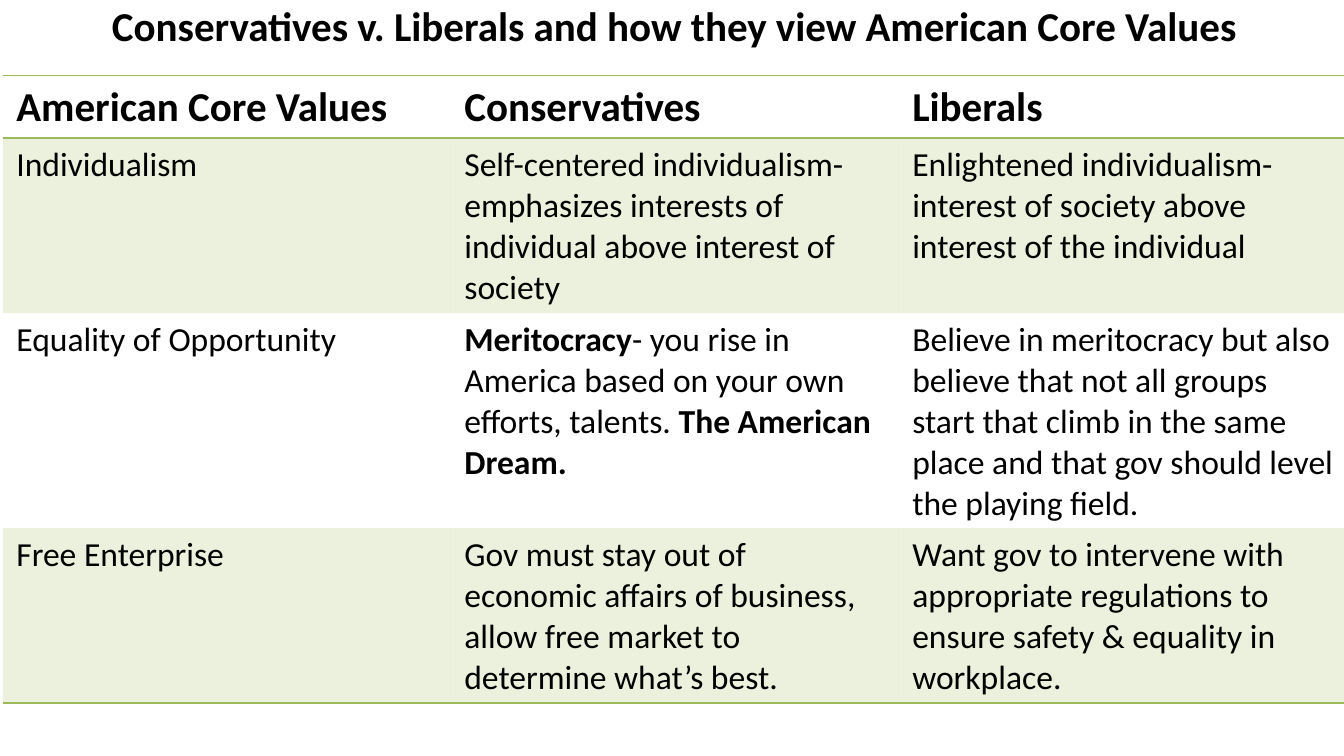
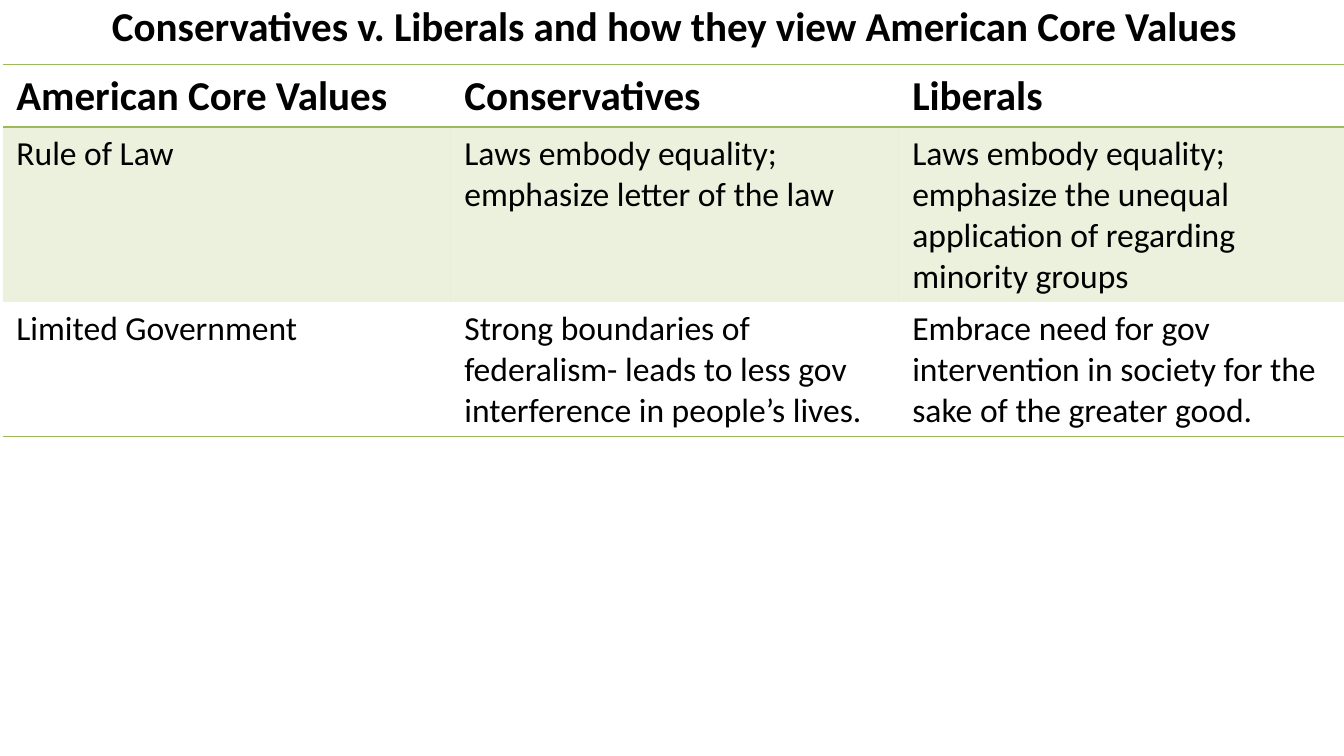
from dataclasses import dataclass
from typing import NamedTuple

from lxml.etree import SubElement
from pptx import Presentation
from pptx.dml.color import RGBColor
from pptx.enum.text import MSO_ANCHOR, MSO_AUTO_SIZE, PP_ALIGN
from pptx.oxml.ns import qn
from pptx.util import Pt


@dataclass(frozen=True)
class Theme:
    font: str = "Calibri"
    text: RGBColor = RGBColor(0x00, 0x00, 0x00)
    accent: RGBColor = RGBColor(0x9B, 0xBB, 0x59)
    heading_size: Pt = Pt(22)
    body_size: Pt = Pt(18)
    rule_width: Pt = Pt(1)
    band_opacity: int = 20
    plain_table_style: str = "{2D5ABB26-0587-4C30-8999-92F81FD0307C}"


class TextRun(NamedTuple):
    text: str
    bold: bool = False


class CoreValue(NamedTuple):
    name: str
    conservatives: list[TextRun]
    liberals: list[TextRun]


@dataclass(frozen=True)
class Comparison:
    top: Pt
    height: Pt
    values: list[CoreValue]


THEME = Theme()
TITLE = "Conservatives v. Liberals and how they view American Core Values"
HEADINGS = ["American Core Values", "Conservatives", "Liberals"]
TABLE_LEFT = Pt(1.6)
COLUMN_WIDTH = Pt(240)
ROW_HEIGHT = Pt(29.2)  # minimum: rows grow with their text

COMPARISONS = [
    Comparison(Pt(40.4), Pt(336.2), [
        CoreValue(
            "Individualism",
            [TextRun("Self-centered individualism- emphasizes interests of "
                     "individual above interest of society")],
            [TextRun("Enlightened individualism- interest of society above "
                     "interest of the individual")]),
        CoreValue(
            "Equality of Opportunity",
            [TextRun("Meritocracy", True),
             TextRun("- you rise in America based on your own efforts, talents. "),
             TextRun("The American Dream.", True)],
            [TextRun("Believe in meritocracy but also believe that not all groups "
                     "start that climb in the same place and that gov should "
                     "level the playing field.")]),
        CoreValue(
            "Free Enterprise",
            [TextRun("Gov must stay out of economic affairs of business, allow "
                     "free market to determine what’s best.")],
            [TextRun("Want gov to intervene with appropriate regulations to "
                     "ensure safety & equality in workplace.")]),
    ]),
    Comparison(Pt(34.5), Pt(199.4), [
        CoreValue(
            "Rule of Law",
            [TextRun("Laws embody equality; emphasize letter of the law")],
            [TextRun("Laws embody equality; emphasize the unequal application "
                     "of regarding minority groups")]),
        CoreValue(
            "Limited Government",
            [TextRun("Strong boundaries of federalism- leads to less gov "
                     "interference in people’s lives.")],
            [TextRun("Embrace need for gov intervention in society for the "
                     "sake of the greater good.")]),
    ]),
]


def write_runs(paragraph, runs: list[TextRun], size: Pt) -> None:
    for text, bold in runs:
        run = paragraph.add_run()
        run.text = text
        run.font.name = THEME.font
        run.font.size = size
        run.font.bold = bold
        run.font.color.rgb = THEME.text


def place_title(slide) -> None:
    title = slide.shapes.title
    title.left, title.top, title.width, title.height = Pt(4.3), Pt(0), Pt(714), Pt(26.8)
    frame = title.text_frame
    frame.margin_left = frame.margin_right = frame.margin_top = frame.margin_bottom = 0
    frame.vertical_anchor = MSO_ANCHOR.TOP
    frame.word_wrap = True
    frame.auto_size = MSO_AUTO_SIZE.SHAPE_TO_FIT_TEXT
    paragraph = frame.paragraphs[0]
    paragraph.alignment = PP_ALIGN.CENTER
    write_runs(paragraph, [TextRun(TITLE, True)], THEME.heading_size)


def add_rule(cell, side: str) -> None:
    properties = cell._tc.get_or_add_tcPr()
    line = SubElement(properties, qn(f"a:ln{side}"), w=str(THEME.rule_width))
    fill = SubElement(line, qn("a:solidFill"))
    SubElement(fill, qn("a:srgbClr"), val=str(THEME.accent))


def fill_band(cell) -> None:
    cell.fill.solid()
    cell.fill.fore_color.rgb = THEME.accent
    color = cell._tc.tcPr.find(".//" + qn("a:solidFill") + "[last()]/" + qn("a:srgbClr")) \
        if cell._tc.tcPr.find(qn("a:solidFill")) is None \
        else cell._tc.tcPr.find(qn("a:solidFill")).find(qn("a:srgbClr"))
    SubElement(color, qn("a:alpha"), val=str(THEME.band_opacity * 1000))


def add_comparison(slide, comparison: Comparison) -> None:
    rows = [[[TextRun(heading, True)] for heading in HEADINGS]]
    rows += [[[TextRun(value.name)], value.conservatives, value.liberals]
             for value in comparison.values]
    shape = slide.shapes.add_table(
        len(rows), len(HEADINGS), TABLE_LEFT, comparison.top,
        COLUMN_WIDTH * len(HEADINGS), ROW_HEIGHT * len(rows))
    table = shape.table
    table.horz_banding = False
    table._tbl.tblPr.find(qn("a:tableStyleId")).text = THEME.plain_table_style

    for row_index, row in enumerate(rows):
        is_header = row_index == 0
        for column_index, runs in enumerate(row):
            cell = table.cell(row_index, column_index)
            size = THEME.heading_size if is_header else THEME.body_size
            write_runs(cell.text_frame.paragraphs[0], runs, size)
            # Rules frame the header and close the table
            if is_header:
                add_rule(cell, "T")
            if is_header or row_index == len(rows) - 1:
                add_rule(cell, "B")
            # Odd rows carry the tinted band
            if row_index % 2:
                fill_band(cell)
            else:
                cell.fill.background()
    shape.height = comparison.height


def main() -> None:
    presentation = Presentation()
    presentation.slide_width, presentation.slide_height = Pt(720), Pt(405)
    title_only = presentation.slide_layouts[5]
    for comparison in COMPARISONS:
        slide = presentation.slides.add_slide(title_only)
        place_title(slide)
        add_comparison(slide, comparison)
    presentation.save("out.pptx")


if __name__ == "__main__":
    main()
